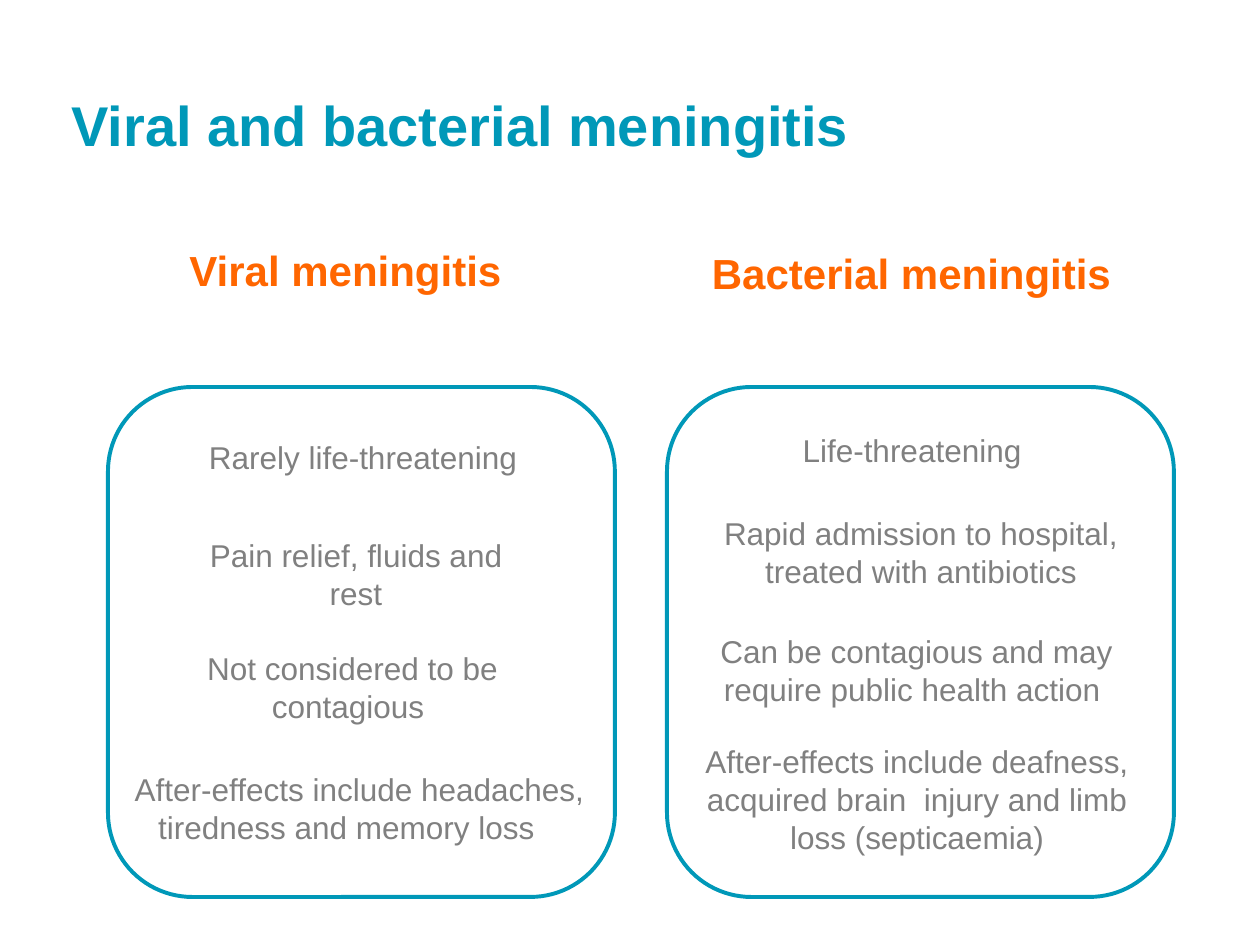
"""Build a slide comparing viral and bacterial meningitis."""
from dataclasses import dataclass

from pptx import Presentation
from pptx.dml.color import RGBColor
from pptx.enum.shapes import MSO_SHAPE
from pptx.enum.text import MSO_ANCHOR, MSO_AUTO_SIZE, PP_ALIGN
from pptx.slide import Slide
from pptx.text.text import TextFrame
from pptx.util import Emu, Pt

ROUNDED = MSO_SHAPE.ROUNDED_RECTANGLE
MIDDLE = MSO_ANCHOR.MIDDLE
NO_FIT, GROW = MSO_AUTO_SIZE.NONE, MSO_AUTO_SIZE.SHAPE_TO_FIT_TEXT
LEFT, CENTER = PP_ALIGN.LEFT, PP_ALIGN.CENTER

TEAL = RGBColor(0x00, 0x98, 0xB8)
ORANGE = RGBColor(0xFF, 0x66, 0x00)
GREY = RGBColor(0x80, 0x80, 0x80)
FONT = "Arial"
PX_PER_INCH = 126
PANEL_TOP, PANEL_WIDTH, PANEL_HEIGHT = 387, 507, 510
HEADING_WIDTH, HEADING_HEIGHT = 427, 63
LINE_HEIGHT, BOX_PADDING = 38, 12


@dataclass(frozen=True)
class Fact:
    text: str
    left: int
    top: int
    width: int
    lines: int = 2
    indent: int = 0


@dataclass(frozen=True)
class Column:
    heading: str
    heading_left: int
    heading_top: int
    panel_left: int
    facts: tuple[Fact, ...]


COLUMNS = (
    Column("Viral meningitis", 132, 238, 108, (
        Fact("Rarely life-threatening", 181, 432, 364, lines=1),
        Fact("Pain relief, fluids and rest", 181, 530, 350),
        Fact("Not considered to be contagious ", 132, 643, 441),
        Fact("After-effects include headaches, tiredness and memory loss",
             87, 764, 519, indent=26),
    )),
    Column("Bacterial meningitis", 698, 241, 667, (
        Fact("Life-threatening", 750, 425, 324, lines=1),
        Fact("Rapid admission to hospital, treated with antibiotics",
             702, 508, 438),
        Fact("Can be contagious and may require public health action ",
             696, 626, 441),
        Fact("After-effects include deafness, acquired brain  injury and limb "
             "loss (septicaemia)", 678, 736, 478, lines=3),
    )),
)


def px(n: int) -> Emu:
    """Turn whole pixels into EMU."""
    return Emu(round(n * 914400 / PX_PER_INCH))


def write(tf: TextFrame, text: str, size: int, color: RGBColor,
          bold: bool = False, align: PP_ALIGN = CENTER, indent: int = 0) -> None:
    """Write one formatted run into the first paragraph."""
    tf.word_wrap = True
    p = tf.paragraphs[0]
    p.alignment = align
    if indent:
        p._p.get_or_add_pPr().set("indent", str(px(indent)))
    r = p.add_run()
    r.text = text
    r.font.name = FONT
    r.font.size = Pt(size)
    r.font.bold = bold
    r.font.color.rgb = color


def add_title(s: Slide, text: str) -> None:
    """Place and format the title placeholder."""
    sp = s.shapes.title
    sp.left, sp.top, sp.width, sp.height = map(px, (59, 45, 1071, 158))
    tf = sp.text_frame
    tf.auto_size = NO_FIT
    tf.vertical_anchor = MIDDLE
    write(tf, text, 32, TEAL, bold=True, align=LEFT)


def add_panel(s: Slide, left: int) -> None:
    """Draw an outlined rounded panel."""
    sp = s.shapes.add_shape(ROUNDED, px(left), px(PANEL_TOP),
                            px(PANEL_WIDTH), px(PANEL_HEIGHT))
    sp.shadow.inherit = False
    sp.fill.background()
    sp.line.color.rgb = TEAL
    sp.line.width = Pt(2.25)


def add_box(s: Slide, left: int, top: int, width: int, height: int) -> TextFrame:
    """Add a text box that grows with its text."""
    tf = s.shapes.add_textbox(px(left), px(top), px(width), px(height)).text_frame
    tf.auto_size = GROW
    return tf


def add_column(s: Slide, column: Column) -> None:
    """Draw a panel with its heading and facts."""
    add_panel(s, column.panel_left)
    tf = add_box(s, column.heading_left, column.heading_top,
                 HEADING_WIDTH, HEADING_HEIGHT)
    write(tf, column.heading, 24, ORANGE, bold=True)
    for fact in column.facts:
        height = BOX_PADDING + fact.lines * LINE_HEIGHT
        tf = add_box(s, fact.left, fact.top, fact.width, height)
        write(tf, fact.text, 18, GREY, indent=fact.indent)


def main() -> None:
    """Build and save the presentation."""
    prs = Presentation()
    prs.slide_width, prs.slide_height = px(1260), px(945)
    s = prs.slides.add_slide(prs.slide_layouts[5])
    add_title(s, "Viral and bacterial meningitis")
    for column in COLUMNS:
        add_column(s, column)
    prs.save("out.pptx")


if __name__ == "__main__":
    main()
